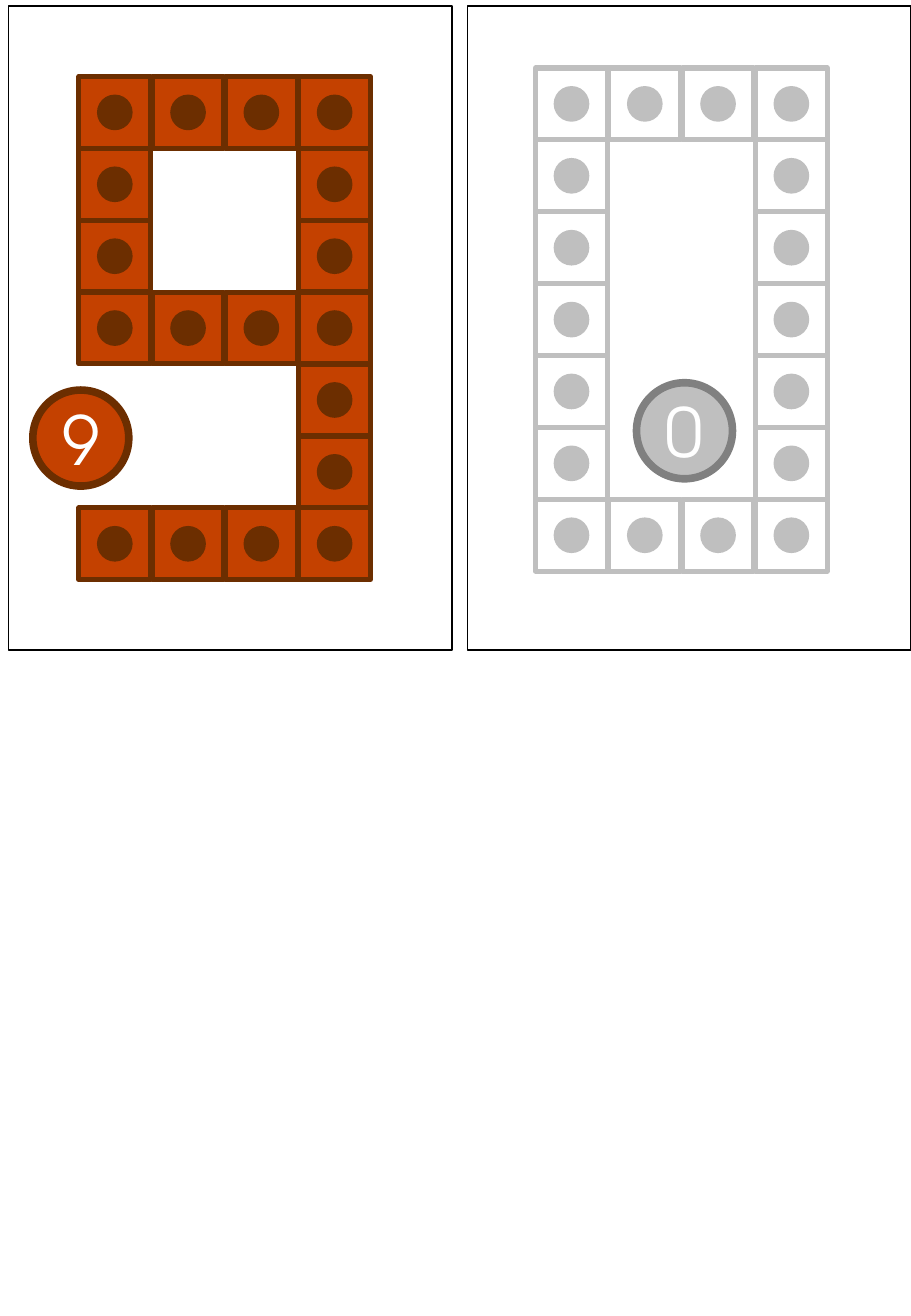
import pptx
import pptx.util
import pptx.dml.color
import pptx.enum.shapes
import pptx.enum.text

Inches = pptx.util.Inches
RECTANGLE = pptx.enum.shapes.MSO_SHAPE.RECTANGLE
OVAL = pptx.enum.shapes.MSO_SHAPE.OVAL

# Content: in each pattern, # is a dotted tile and . is a gap
BROWN, ORANGE = "6C2E00", "C44100"
WHITE, BLACK, SILVER, GRAY = "FFFFFF", "000000", "BFBFBF", "808080"
FONT = "TeX Gyre Adventor"

NUMBERS = [
    {
        "digit": "9",
        "pattern": ["####",
                    "#..#",
                    "#..#",
                    "####",
                    "...#",
                    "...#",
                    "####"],
        "grid": (0.65, 0.63), "badge": (0.27, 3.21),
        "tile_fill": ORANGE, "tile_edge": BROWN,
        "badge_fill": ORANGE, "badge_edge": BROWN,
    },
    {
        "digit": "0",
        "pattern": ["####",
                    "#..#",
                    "#..#",
                    "#..#",
                    "#..#",
                    "#..#",
                    "####"],
        "grid": (4.41, 0.56), "badge": (5.24, 3.15),
        "tile_fill": WHITE, "tile_edge": SILVER,
        "badge_fill": SILVER, "badge_edge": GRAY,
    },
]

# Layout in inches
CARD_LEFT, CARD_TOP, CARD_STEP = 0.07, 0.05, 3.78
CARD_WIDTH, CARD_HEIGHT = 3.65, 5.3
TILE, DOT, BADGE = 0.59, 0.28, 0.79
COLUMN_STEP = 1.81 / 3   # first to fourth column
ROW_STEP = 3.55 / 6      # first to seventh row
DOT_INSET = (TILE - DOT) / 2


def color(value):
    return pptx.dml.color.RGBColor.from_string(value)


def add_outlined(page, kind, left, top, width, height, *, fill, edge, weight):
    shape = page.shapes.add_shape(
        kind, Inches(left), Inches(top), Inches(width), Inches(height))
    shape.shadow.inherit = False
    shape.fill.solid()
    shape.fill.fore_color.rgb = color(fill)
    shape.line.color.rgb = color(edge)
    shape.line.width = pptx.util.Pt(weight)
    return shape


def write_text(shape, text, *, size, font, ink):
    frame = shape.text_frame
    frame.vertical_anchor = pptx.enum.text.MSO_ANCHOR.MIDDLE
    para = frame.paragraphs[0]
    para.alignment = pptx.enum.text.PP_ALIGN.CENTER
    span = para.add_run()
    span.text = text
    span.font.size = pptx.util.Pt(size)
    span.font.name = font
    span.font.color.rgb = color(ink)


def add_tile(page, left, top, *, fill, edge):
    add_outlined(page, RECTANGLE, left, top, TILE, TILE,
                 fill=fill, edge=edge, weight=3)
    add_outlined(page, OVAL, left + DOT_INSET, top + DOT_INSET, DOT, DOT,
                 fill=edge, edge=edge, weight=1)


def add_number(page, number):
    # Tiles on the grid
    grid_left, grid_top = number["grid"]
    for row, marks in enumerate(number["pattern"]):
        for column, mark in enumerate(marks):
            if mark == "#":
                add_tile(page, grid_left + column * COLUMN_STEP,
                         grid_top + row * ROW_STEP,
                         fill=number["tile_fill"], edge=number["tile_edge"])

    # Round badge with the digit
    badge = add_outlined(page, OVAL, *number["badge"], BADGE, BADGE,
                         fill=number["badge_fill"], edge=number["badge_edge"],
                         weight=4.5)
    write_text(badge, number["digit"], size=40, font=FONT, ink=WHITE)


def main():
    deck = pptx.Presentation()
    deck.slide_width, deck.slide_height = Inches(7.5), Inches(10.83)
    page = deck.slides.add_slide(deck.slide_layouts[6])

    # One card per number
    for index, number in enumerate(NUMBERS):
        add_outlined(page, RECTANGLE, CARD_LEFT + index * CARD_STEP, CARD_TOP,
                     CARD_WIDTH, CARD_HEIGHT,
                     fill=WHITE, edge=BLACK, weight=1)
        add_number(page, number)

    deck.save("out.pptx")


if __name__ == "__main__":
    main()
